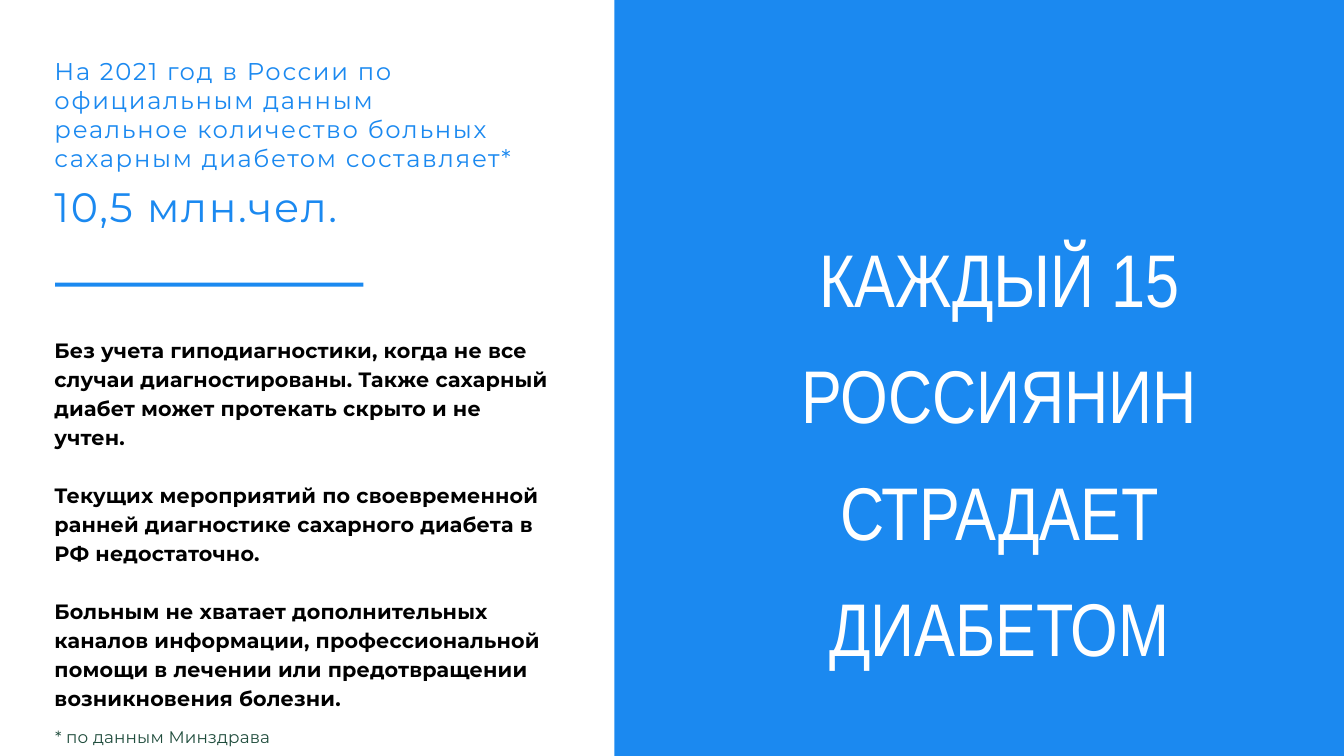
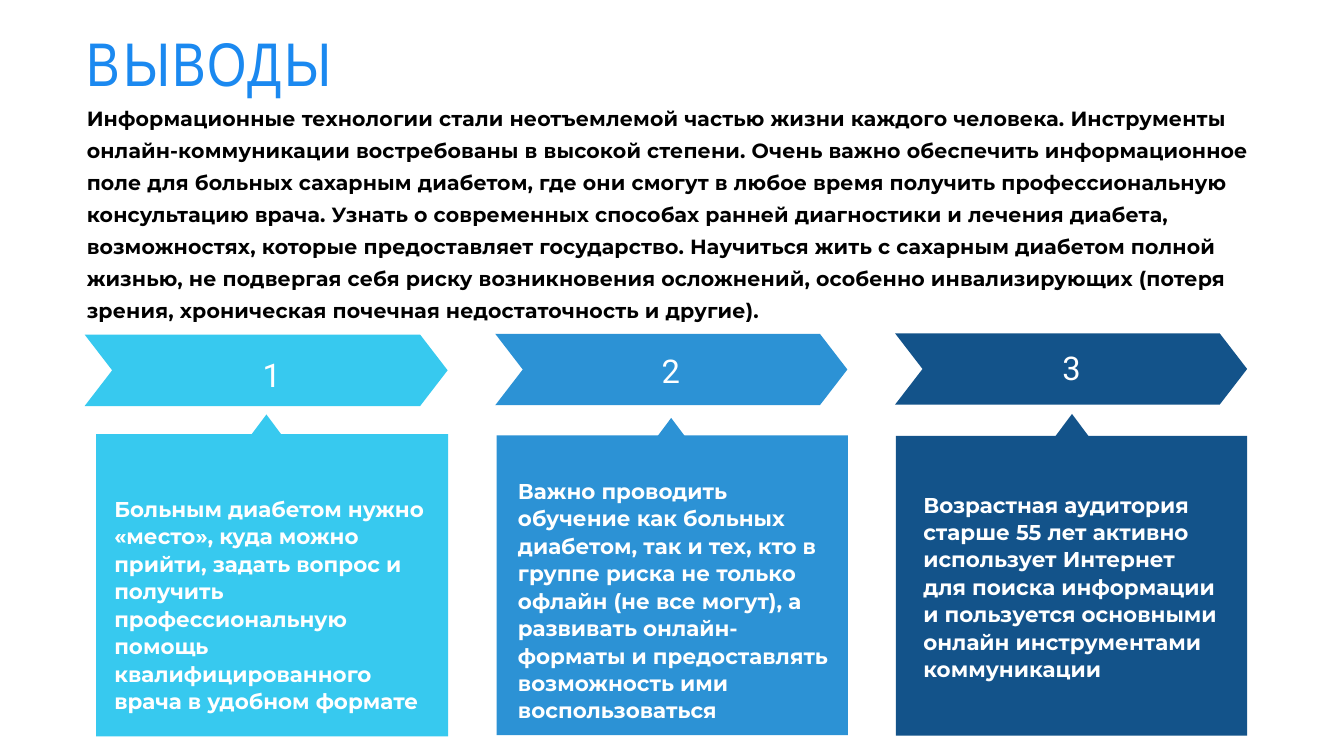
from dataclasses import dataclass

from pptx import Presentation
from pptx.dml.color import RGBColor
from pptx.enum.shapes import MSO_SHAPE as SHAPE
from pptx.enum.text import PP_ALIGN as ALIGN
from pptx.util import Cm, Pt

SLIDE_W, SLIDE_H = 50.8, 28.58


@dataclass(frozen=True)
class TextStyle:
    size: float
    font: str
    color: str
    line: float
    bold: bool = False
    tracking: float = 0
    before: float = 0
    align: ALIGN = ALIGN.LEFT
    fixed_line: bool = True


@dataclass(frozen=True)
class Theme:
    blue: str = "1B89F0"
    sky: str = "37C9EF"
    azure: str = "2C92D5"
    navy: str = "13538A"
    white: str = "FFFFFF"
    black: str = "000000"
    green: str = "204D3D"
    text_font: str = "Montserrat"
    title_font: str = "Arial Narrow"
    number_font: str = "Roboto"

    @property
    def lead(self):
        return TextStyle(26, self.text_font, self.blue, 31.2, tracking=1.8)

    @property
    def figure(self):
        return TextStyle(44, self.text_font, self.blue, 31.2, tracking=1.8, before=31.2)

    @property
    def body(self):
        return TextStyle(22.2, self.text_font, self.black, 31.1, bold=True,
                         tracking=0.2, before=31.1)

    @property
    def footnote(self):
        return TextStyle(18, self.text_font, self.green, 29.7, tracking=0.2)

    @property
    def headline(self):
        return TextStyle(80, self.title_font, self.white, 124.6, align=ALIGN.CENTER)

    @property
    def title(self):
        return TextStyle(66, self.title_font, self.blue, 47.2, tracking=2.9)

    @property
    def intro(self):
        return TextStyle(22, self.text_font, self.black, 1.3, bold=True,
                         tracking=0.2, fixed_line=False)

    @property
    def number(self):
        return TextStyle(35, self.number_font, self.white, 49, tracking=1.8,
                         align=ALIGN.CENTER)

    @property
    def card(self):
        return TextStyle(23, self.text_font, self.white, 29.4, bold=True)


@dataclass(frozen=True)
class Conclusion:
    color: str
    arrow: tuple
    number: tuple
    card: tuple
    pointer: tuple
    text_box: tuple
    text: str


class Deck:
    def __init__(self, theme):
        self.theme = theme
        self.prs = Presentation()
        self.prs.slide_width, self.prs.slide_height = Cm(SLIDE_W), Cm(SLIDE_H)
        self.s = None

    def add_slide(self):
        self.s = self.prs.slides.add_slide(self.prs.slide_layouts[6])

    def paint(self, sp, color):
        sp.shadow.inherit = False
        sp.fill.solid()
        sp.fill.fore_color.rgb = RGBColor.from_string(color)
        sp.line.fill.background()

    def rect(self, box, color):
        sp = self.s.shapes.add_shape(SHAPE.RECTANGLE, *map(Cm, box))
        self.paint(sp, color)

    def outline(self, points, color):
        start, *rest = [(Cm(x), Cm(y)) for x, y in points]
        builder = self.s.shapes.build_freeform(*start)
        builder.add_line_segments(rest, close=True)
        self.paint(builder.convert_to_shape(), color)

    def arrow(self, left, top, width, color, height=2.7, depth=1.04):
        right, bottom, middle = left + width, top + height, top + height / 2
        self.outline([(left, top), (right - depth, top), (right, middle),
                      (right - depth, bottom), (left, bottom),
                      (left + depth, middle)], color)

    def pointer(self, center, top, color, width=1.24, height=0.83):
        self.outline([(center, top), (center + width / 2, top + height),
                      (center - width / 2, top + height)], color)

    def text(self, box, *items):
        tf = self.s.shapes.add_textbox(*map(Cm, box)).text_frame
        tf.word_wrap = True
        tf.margin_left = tf.margin_right = tf.margin_top = tf.margin_bottom = 0
        for i, (words, style) in enumerate(items):
            p = tf.add_paragraph() if i else tf.paragraphs[0]
            p.text = words
            p.alignment = style.align
            p.line_spacing = Pt(style.line) if style.fixed_line else style.line
            if i:
                p.space_before = Pt(style.before)
            for r in p.runs:
                self.format_run(r, style)

    def format_run(self, r, style):
        r.font.size = Pt(style.size)
        r.font.name = style.font
        r.font.bold = style.bold
        r.font.color.rgb = RGBColor.from_string(style.color)
        if style.tracking:
            r.font._element.set("spc", str(round(style.tracking * 100)))


def build_statistics(deck):
    t = deck.theme
    deck.add_slide()
    deck.text(
        (2.06, 2.13, 18.67, 6.73),
        ("На 2021 год в России по официальным данным", t.lead),
        ("реальное количество больных сахарным диабетом составляет*", t.lead),
        ("10,5 млн.чел.", t.figure),
    )
    deck.text(
        (2.06, 12.6, 18.67, 13.18),
        ("Без учета гиподиагностики, когда не все случаи диагностированы. "
         "Также сахарный диабет может протекать скрыто и не учтен.", t.body),
        ("Текущих мероприятий по своевременной ранней диагностике "
         "сахарного диабета в РФ недостаточно.", t.body),
        ("Больным не хватает дополнительных каналов информации, "
         "профессиональной помощи в лечении или предотвращении "
         "возникновения болезни.", t.body),
    )
    deck.rect((2.08, 10.69, 11.66, 0.15), t.blue)
    deck.text((2.08, 27.2, 9.55, 0.97), ("* по данным Минздрава", t.footnote))
    panel_left = 23.22
    deck.rect((panel_left, 0, SLIDE_W - panel_left, SLIDE_H), t.blue)
    deck.text((25.4, 7.8, 24.77, 12.98),
              ("КАЖДЫЙ 15 РОССИЯНИН СТРАДАЕТ ДИАБЕТОМ", t.headline))


def build_conclusions(deck):
    t = deck.theme
    conclusions = [
        Conclusion(
            t.sky, (3.2, 12.65, 13.72), (9.47, 13.16), (3.63, 16.41, 13.31, 11.43),
            (10.07, 15.67), (4.32, 18.69, 12.07, 6.15),
            "Больным диабетом нужно «место», куда можно прийти, задать вопрос "
            "и получить профессиональную помощь квалифицированного врача "
            "в удобном формате"),
        Conclusion(
            t.azure, (18.72, 12.62, 13.31), (24.56, 13), (18.77, 16.46, 13.28, 11.33),
            (25.37, 15.8), (19.58, 18.01, 11.96, 8.2),
            "Важно проводить обучение как больных диабетом, так и тех, кто "
            "в группе риска не только офлайн (не все могут), а развивать "
            "онлайн-форматы и предоставлять возможность ими воспользоваться"),
        Conclusion(
            t.navy, (33.83, 12.6, 13.31), (39.7, 12.9), (33.86, 16.48, 13.28, 11.33),
            (40.52, 15.65), (34.9, 18.52, 11.2, 7.19),
            "Возрастная аудитория старше 55 лет активно использует Интернет "
            "для поиска информации и пользуется основными онлайн "
            "инструментами коммуникации"),
    ]
    deck.add_slide()
    for n, c in enumerate(conclusions, 1):
        deck.arrow(*c.arrow, c.color)
        deck.text((*c.number, 1.6, 1.7), (str(n), t.number))
        deck.rect(c.card, c.color)
        deck.pointer(*c.pointer, c.color)
        deck.text(c.text_box, (c.text, t.card))
    deck.text(
        (3.28, 3.71, 44.75, 8.46),
        ("Информационные технологии стали неотъемлемой частью жизни каждого "
         "человека. Инструменты онлайн-коммуникации востребованы в высокой "
         "степени. Очень важно обеспечить информационное поле для больных "
         "сахарным диабетом, где они смогут в любое время получить "
         "профессиональную консультацию врача. Узнать о современных способах "
         "ранней диагностики и лечения диабета, возможностях, которые "
         "предоставляет государство. Научиться жить с сахарным диабетом полной "
         "жизнью, не подвергая себя риску возникновения осложнений, особенно "
         "инвализирующих (потеря зрения, хроническая почечная недостаточность "
         "и другие).", t.intro),
    )
    deck.text((3.28, 2.06, 31.09, 1.8), ("ВЫВОДЫ", t.title))


def main():
    deck = Deck(Theme())
    build_statistics(deck)
    build_conclusions(deck)
    deck.prs.save("out.pptx")


if __name__ == "__main__":
    main()
